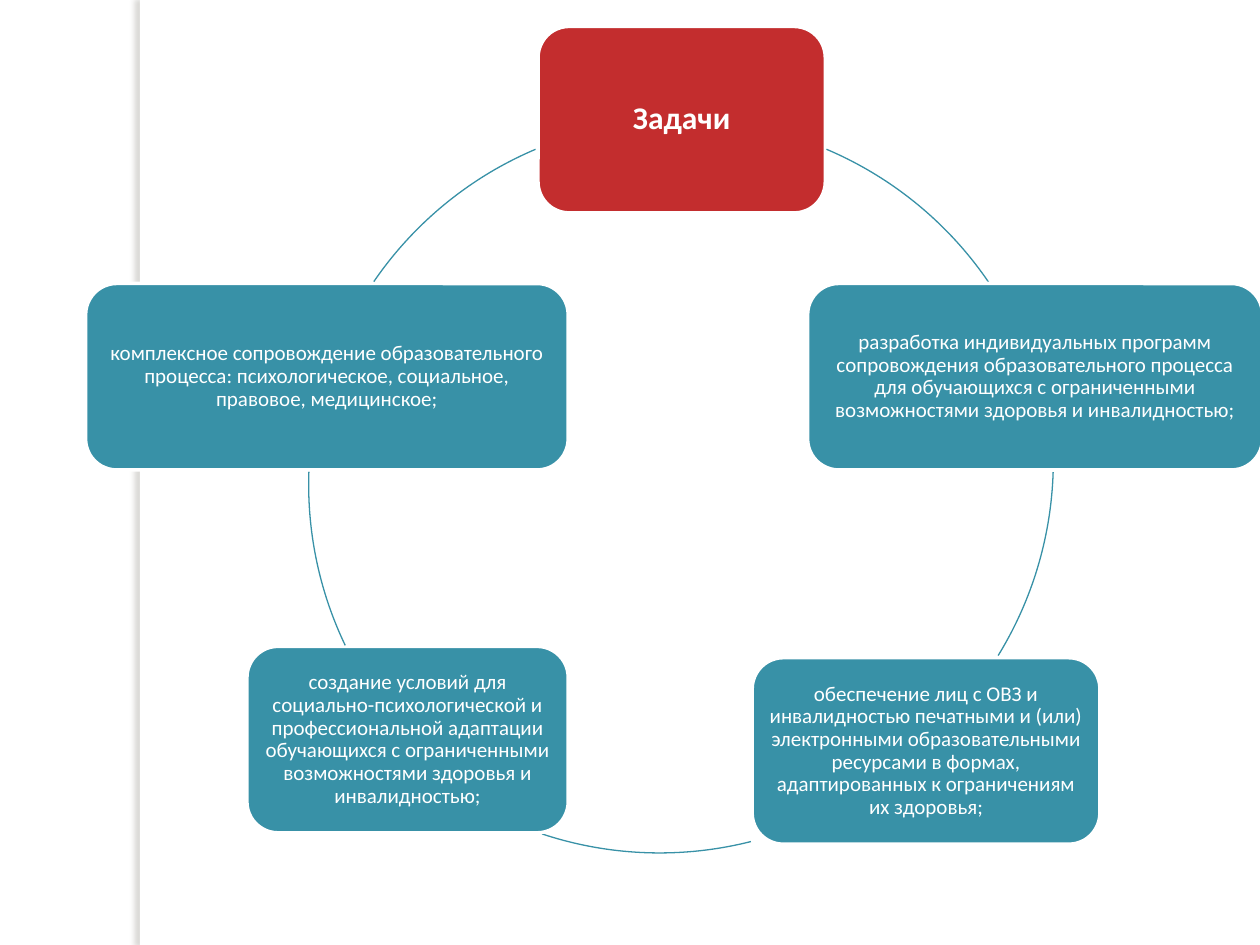
from dataclasses import dataclass

from lxml.etree import SubElement
from pptx import Presentation
from pptx.dml.color import RGBColor
from pptx.enum.shapes import MSO_SHAPE
from pptx.enum.text import MSO_ANCHOR, PP_ALIGN
from pptx.oxml.ns import qn
from pptx.util import Inches, Pt


@dataclass(frozen=True)
class Theme:
    """Colours, type sizes and line widths of the slide."""
    paper: str = "FFFFFF"
    accent: str = "C32D2E"
    teal: str = "3891A7"
    shade: str = "736F63"
    font: str = "Calibri"
    heading_size: int = 18
    body_size: int = 12
    border: float = 2
    ring: float = 0.75


@dataclass(frozen=True)
class Box:
    """A region in EMU, divided into 100 columns and 75 rows."""
    left: int
    top: int
    width: int
    height: int

    def region(self, column, row, columns, rows):
        """Return the region covering the given columns and rows."""
        return Box(
            round(self.left + self.width * column / 100),
            round(self.top + self.height * row / 75),
            round(self.width * columns / 100),
            round(self.height * rows / 75),
        )

    def place(self):
        """Return left, top, width and height."""
        return self.left, self.top, self.width, self.height


THEME = Theme()
CARD_ROWS = 14.8
RING_SPAN = 59.1
HEADING = {"size": Pt(THEME.heading_size), "bold": True}
BODY = {"size": Pt(THEME.body_size), "bold": False}

CARDS = [
    ("Задачи", (42.7, 2.1, 22.8), THEME.accent, HEADING, 0.07),
    ("разработка индивидуальных программ сопровождения образовательного "
     "процесса для обучающихся с ограниченными возможностями здоровья и "
     "инвалидностью;", (64.1, 22.5, 36.1), THEME.teal, BODY, 0.05),
    ("обеспечение лиц с ОВЗ и инвалидностью печатными и (или) электронными "
     "образовательными ресурсами в формах, адаптированных к ограничениям их "
     "здоровья;", (59.7, 52.2, 27.6), THEME.teal, BODY, 0.05),
    ("создание условий для социально-психологической и профессиональной "
     "адаптации обучающихся с ограниченными возможностями здоровья и "
     "инвалидностью;", (19.6, 51.3, 25.5), THEME.teal, BODY, 0.05),
    ("комплексное сопровождение образовательного процесса: психологическое, "
     "социальное, правовое, медицинское;",
     (6.8, 22.5, 38.3), THEME.teal, BODY, 0.05),
]
ARCS = [
    ((24.5, 9.5), (293, 325.7)),
    ((24.5, 7), (1.8, 31.6)),
    ((22.8, 8.6), (75.8, 108.4)),
    ((24.5, 8.9), (154.4, 182)),
    ((24.5, 9.5), (214.4, 247)),
]


def apply(target, formats):
    """Set every attribute named in formats on the target."""
    for attribute, value in formats.items():
        setattr(target, attribute, value)


def draw_margin(slide, box):
    """Draw the white margin strip with a soft shadow to its left."""
    strip = slide.shapes.add_shape(MSO_SHAPE.RECTANGLE, *box.place())
    strip.shadow.inherit = False
    strip.fill.solid()
    strip.fill.fore_color.rgb = RGBColor.from_string(THEME.paper)
    strip.line.fill.background()
    effects = strip._element.spPr.find(qn("a:effectLst"))
    shadow = SubElement(
        effects, qn("a:outerShdw"), blurRad=str(Pt(3)), dist=str(Pt(3)),
        dir="10800000", algn="tl", rotWithShape="0",
    )
    tint = SubElement(shadow, qn("a:srgbClr"), val=THEME.shade)
    SubElement(tint, qn("a:alpha"), val="25000")


def draw_card(slide, box, wording, fill, type_format, inset):
    """Draw one rounded card with centred wording."""
    card = slide.shapes.add_shape(MSO_SHAPE.ROUNDED_RECTANGLE, *box.place())
    card.shadow.inherit = False
    card.fill.solid()
    card.fill.fore_color.rgb = RGBColor.from_string(fill)
    card.line.color.rgb = RGBColor.from_string(THEME.paper)
    card.line.width = Pt(THEME.border)
    sides = ("left", "top", "right", "bottom")
    apply(card.text_frame, {
        "word_wrap": True,
        "vertical_anchor": MSO_ANCHOR.MIDDLE,
        **{f"margin_{side}": Inches(inset) for side in sides},
    })
    paragraph = card.text_frame.paragraphs[0]
    apply(paragraph, {"alignment": PP_ALIGN.CENTER, "line_spacing": 0.9})
    run = paragraph.add_run()
    run.text = wording
    apply(run.font, {"name": THEME.font, **type_format})
    run.font.color.rgb = RGBColor.from_string(THEME.paper)


def draw_arc(slide, box, angles):
    """Draw a clockwise arc of the ring between two angles in degrees."""
    arc = slide.shapes.add_shape(MSO_SHAPE.ARC, *box.place())
    arc.shadow.inherit = False
    arc.fill.background()
    arc.line.color.rgb = RGBColor.from_string(THEME.teal)
    arc.line.width = Pt(THEME.ring)
    for index, angle in enumerate(angles):
        arc.adjustments[index] = angle * 0.6


def draw_cycle(slide, box):
    """Draw the cards clockwise, each followed by its arc to the next."""
    for card, (corner, angles) in zip(CARDS, ARCS):
        wording, (column, row, columns), fill, type_format, inset = card
        card_box = box.region(column, row, columns, CARD_ROWS)
        draw_card(slide, card_box, wording, fill, type_format, inset)
        draw_arc(slide, box.region(*corner, RING_SPAN, RING_SPAN), angles)


def main():
    """Build and save the slide."""
    deck = Presentation()
    apply(deck, {"slide_width": Inches(10), "slide_height": Inches(7.5)})
    slide = deck.slides.add_slide(deck.slide_layouts[6])
    page = Box(0, 0, deck.slide_width, deck.slide_height)
    draw_margin(slide, page.region(11.1, 0, 0.8, 75))
    draw_cycle(slide, page)
    deck.save("out.pptx")


if __name__ == "__main__":
    main()
